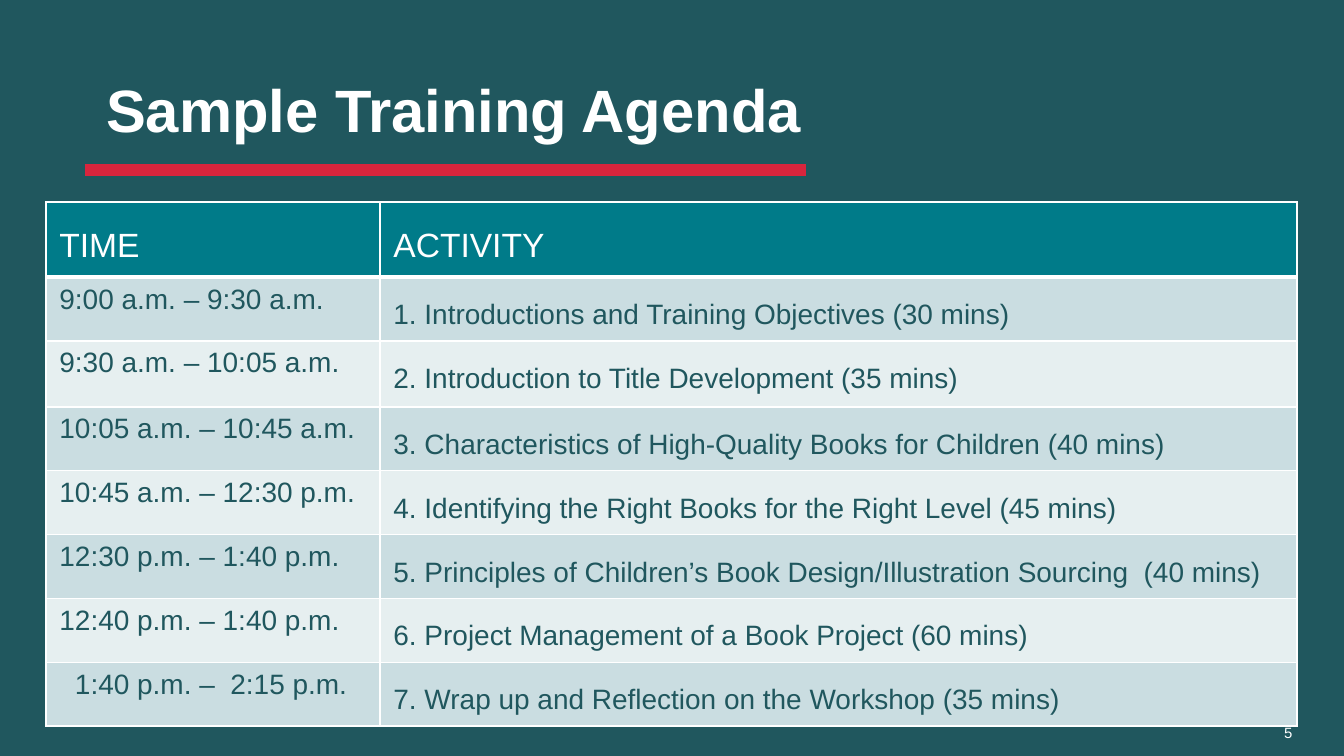
from dataclasses import dataclass

from lxml import etree
from pptx import Presentation
from pptx import util as u
from pptx.dml.color import RGBColor
from pptx.enum import shapes, text
from pptx.oxml.ns import qn

PX_PER_INCH = 134.4


@dataclass(frozen=True)
class Theme:
    font: str = "Arial"
    background: str = "20575E"
    ink: str = "20575E"
    light: str = "FFFFFF"
    accent: str = "D8253D"
    header: str = "007B89"
    bands: tuple = ("CADDE1", "E6EFF0")
    title_size: int = 32
    header_size: int = 18
    body_size: int = 15
    number_size: int = 8


THEME = Theme()

COLUMN_WIDTHS = (334, 917)
ROW_HEIGHTS = (75, 63, 66) + (60,) * 5
HEADINGS = ("TIME", "ACTIVITY")
SESSIONS = (
    ("9:00 a.m. – 9:30 a.m.", "1. Introductions and Training Objectives (30 mins)"),
    ("9:30 a.m. – 10:05 a.m.", "2. Introduction to Title Development (35 mins)"),
    ("10:05 a.m. – 10:45 a.m.", "3. Characteristics of High-Quality Books for Children (40 mins)"),
    ("10:45 a.m. – 12:30 p.m.", "4. Identifying the Right Books for the Right Level (45 mins)"),
    ("12:30 p.m. – 1:40 p.m.", "5. Principles of Children’s Book Design/Illustration Sourcing  (40 mins)"),
    ("12:40 p.m. – 1:40 p.m.", "6. Project Management of a Book Project (60 mins)"),
    ("1:40 p.m. –  2:15 p.m.", "7. Wrap up and Reflection on the Workshop (35 mins)"),
)


def px(length):
    return u.Emu(round(length * 914400 / PX_PER_INCH))


def rgb(color):
    return RGBColor.from_string(color)


def style(paragraph, size, color, bold=False, spacing=None):
    paragraph.font.name = THEME.font
    paragraph.font.size = u.Pt(size)
    paragraph.font.bold = bold
    paragraph.font.color.rgb = rgb(color)
    if spacing:
        paragraph.line_spacing = spacing


def add_text(slide, box, words, size, **look):
    frame = slide.shapes.add_textbox(*map(px, box)).text_frame
    frame.word_wrap = True
    frame.vertical_anchor = text.MSO_ANCHOR.MIDDLE
    frame.text = words
    style(frame.paragraphs[0], size, THEME.light, **look)


def add_rule(slide, left, right, y, weight):
    rule = slide.shapes.add_connector(
        shapes.MSO_CONNECTOR.STRAIGHT, px(left), px(y), px(right), px(y))
    rule.line.color.rgb = rgb(THEME.accent)
    rule.line.width = u.Pt(weight)
    etree.SubElement(rule._element.spPr, qn("a:effectLst"))


def add_borders(cell, top=1, bottom=1):
    """Draw the cell's edges; must run before the cell's fill is set."""
    properties = cell._tc.get_or_add_tcPr()
    for side, weight in (("L", 1), ("R", 1), ("T", top), ("B", bottom)):
        edge = etree.SubElement(properties, qn(f"a:ln{side}"), w=str(u.Pt(weight)))
        fill = etree.SubElement(edge, qn("a:solidFill"))
        etree.SubElement(fill, qn("a:srgbClr"), val=THEME.light)


def fill_cell(cell, words, fill, size, color, spacing, **borders):
    add_borders(cell, **borders)
    cell.fill.solid()
    cell.fill.fore_color.rgb = rgb(fill)
    cell.text = words
    style(cell.text_frame.paragraphs[0], size, color, spacing=spacing)


def add_agenda(slide, left, top):
    agenda = slide.shapes.add_table(
        len(ROW_HEIGHTS), len(COLUMN_WIDTHS), px(left), px(top),
        px(sum(COLUMN_WIDTHS)), px(sum(ROW_HEIGHTS))).table
    for column, width in zip(agenda.columns, COLUMN_WIDTHS):
        column.width = px(width)
    for row, height in zip(agenda.rows, ROW_HEIGHTS):
        row.height = px(height)

    for column, heading in enumerate(HEADINGS):
        fill_cell(agenda.cell(0, column), heading, THEME.header,
                  THEME.header_size, THEME.light, 1.5, bottom=3)
    for row, session in enumerate(SESSIONS, start=1):
        band = THEME.bands[(row - 1) % 2]
        for column, (words, spacing) in enumerate(zip(session, (1.0, 1.5))):
            fill_cell(agenda.cell(row, column), words, band, THEME.body_size,
                      THEME.ink, spacing, top=3 if row == 1 else 1)
    agenda.cell(len(SESSIONS), 0).margin_left = px(29)


def main():
    deck = Presentation()
    deck.slide_width, deck.slide_height = px(1344), px(756)
    slide = deck.slides.add_slide(deck.slide_layouts[6])
    slide.background.fill.solid()
    slide.background.fill.fore_color.rgb = rgb(THEME.background)

    add_rule(slide, 85, 806, 170, 6.5)
    add_text(slide, (93, 40, 1159, 146), "Sample Training Agenda",
             THEME.title_size, bold=True, spacing=0.9)
    add_agenda(slide, 46, 202)
    add_text(slide, (1271, 716, 47, 32), "5", THEME.number_size)
    deck.save("out.pptx")


if __name__ == "__main__":
    main()
